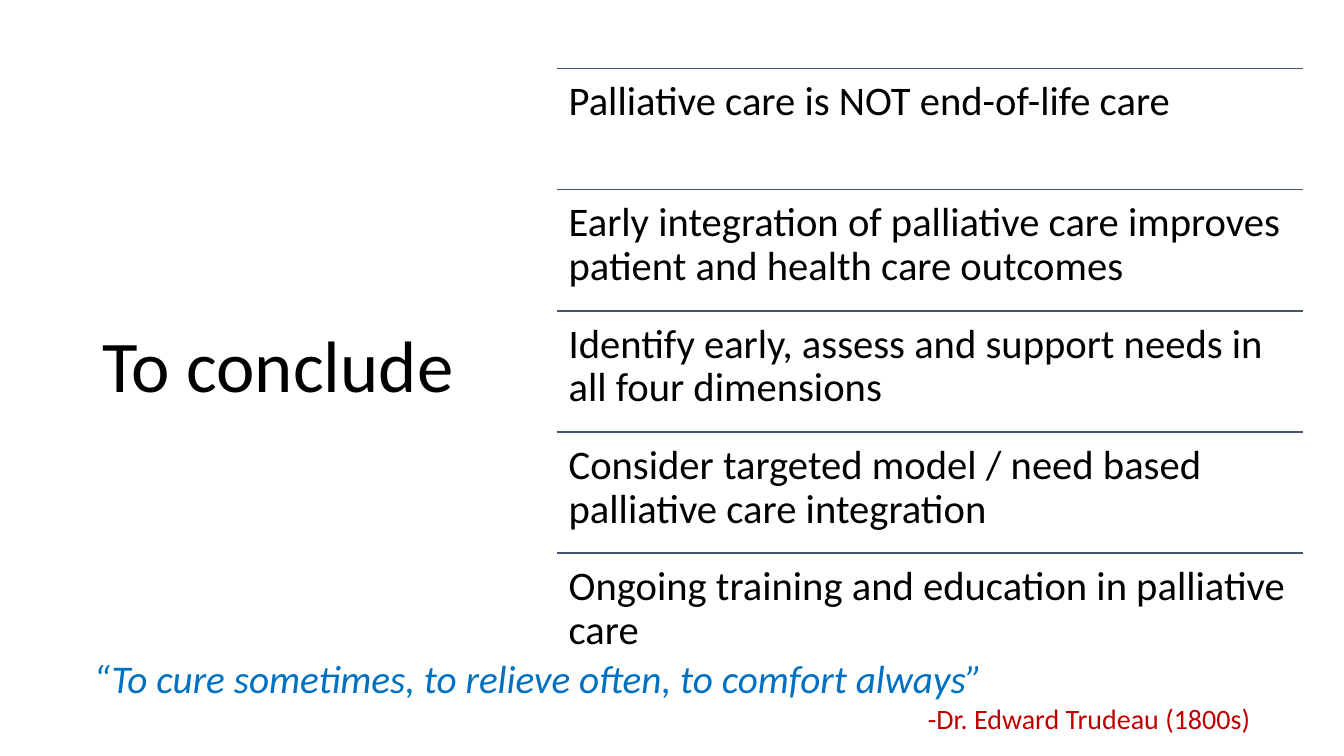
"""Build the closing slide: a title, five ruled conclusions and a quotation."""
from lxml.etree import SubElement
from pptx import Presentation
from pptx.dml.color import RGBColor
from pptx.enum.text import MSO_ANCHOR, PP_ALIGN
from pptx.oxml.ns import qn
from pptx.util import Inches, Pt

BLACK = RGBColor(0x00, 0x00, 0x00)
SLATE = RGBColor(0x44, 0x54, 0x6A)
BLUE = RGBColor(0x00, 0x70, 0xC0)
RED = RGBColor(0xC0, 0x00, 0x00)

TITLE = "To conclude"
CONCLUSIONS = [
    "Palliative care is NOT end-of-life care",
    "Early integration of palliative care improves patient and health care outcomes",
    "Identify early, assess and support needs in all four dimensions",
    "Consider targeted model / need based palliative care integration",
    "Ongoing training and education in palliative care",
]
QUOTE = "“To cure sometimes, to relieve often, to comfort always”"
AUTHOR = "-Dr. Edward Trudeau (1800s)"

SLIDE_WIDTH, SLIDE_HEIGHT = 13.33, 7.5
TITLE_AREA = (0.92, 0.61, 3.69, 6.09)
LIST_LEFT, LIST_TOP, LIST_WIDTH, LIST_HEIGHT = 5.52, 0.68, 7.4, 6.01
QUOTE_AREA = (0.83, 6.44, 11.67, 0.91)
ROW_HEIGHT = LIST_HEIGHT / len(CONCLUSIONS)
ROW_INSET = 0.12

TITLE_FONT = {"size": Pt(52), "color": BLACK}
ROW_FONT = {"size": Pt(29), "color": BLACK}
QUOTE_FONT = {"size": Pt(28), "color": BLUE, "italic": True}
AUTHOR_FONT = {"size": Pt(20), "color": RED, "italic": False}
TIGHT = {"line_spacing": 0.9}
ROW_SPACING = {"line_spacing": 0.9, "space_after": Pt(10)}
RIGHT = {"alignment": PP_ALIGN.RIGHT}


def set_all(target, values):
    for name, value in values.items():
        setattr(target, name, value)


def add_text(page, area, lines, frame_format):
    box = page.shapes.add_textbox(*map(Inches, area))
    frame = box.text_frame
    set_all(frame, {"word_wrap": True, **frame_format})
    for index, (text, font, layout) in enumerate(lines):
        para = frame.add_paragraph() if index else frame.paragraphs[0]
        set_all(para, layout)
        span = para.add_run()
        span.text = text
        span.font.name = "Calibri"
        span.font.color.rgb = font["color"]
        set_all(span.font, {key: font[key] for key in font if key != "color"})


def add_rule(page, top):
    ends = (LIST_LEFT, top, LIST_LEFT + LIST_WIDTH, top)
    rule = page.shapes.add_connector(1, *map(Inches, ends))
    rule.line.color.rgb = SLATE
    rule.line.width = Pt(1)
    SubElement(rule._element.spPr, qn("a:effectLst"))


def main():
    deck = Presentation()
    deck.slide_width, deck.slide_height = Inches(SLIDE_WIDTH), Inches(SLIDE_HEIGHT)
    page = deck.slides.add_slide(deck.slide_layouts[6])

    add_text(page, TITLE_AREA, [(TITLE, TITLE_FONT, TIGHT)],
             {"vertical_anchor": MSO_ANCHOR.MIDDLE})

    sides = ("left", "top", "right", "bottom")
    insets = {f"margin_{side}": Inches(ROW_INSET) for side in sides}
    for row, conclusion in enumerate(CONCLUSIONS):
        top = LIST_TOP + row * ROW_HEIGHT
        add_rule(page, top)
        add_text(page, (LIST_LEFT, top, LIST_WIDTH, ROW_HEIGHT),
                 [(conclusion, ROW_FONT, ROW_SPACING)], insets)

    add_text(page, QUOTE_AREA,
             [(QUOTE, QUOTE_FONT, {}), (AUTHOR, AUTHOR_FONT, RIGHT)], {})
    deck.save("out.pptx")


if __name__ == "__main__":
    main()
